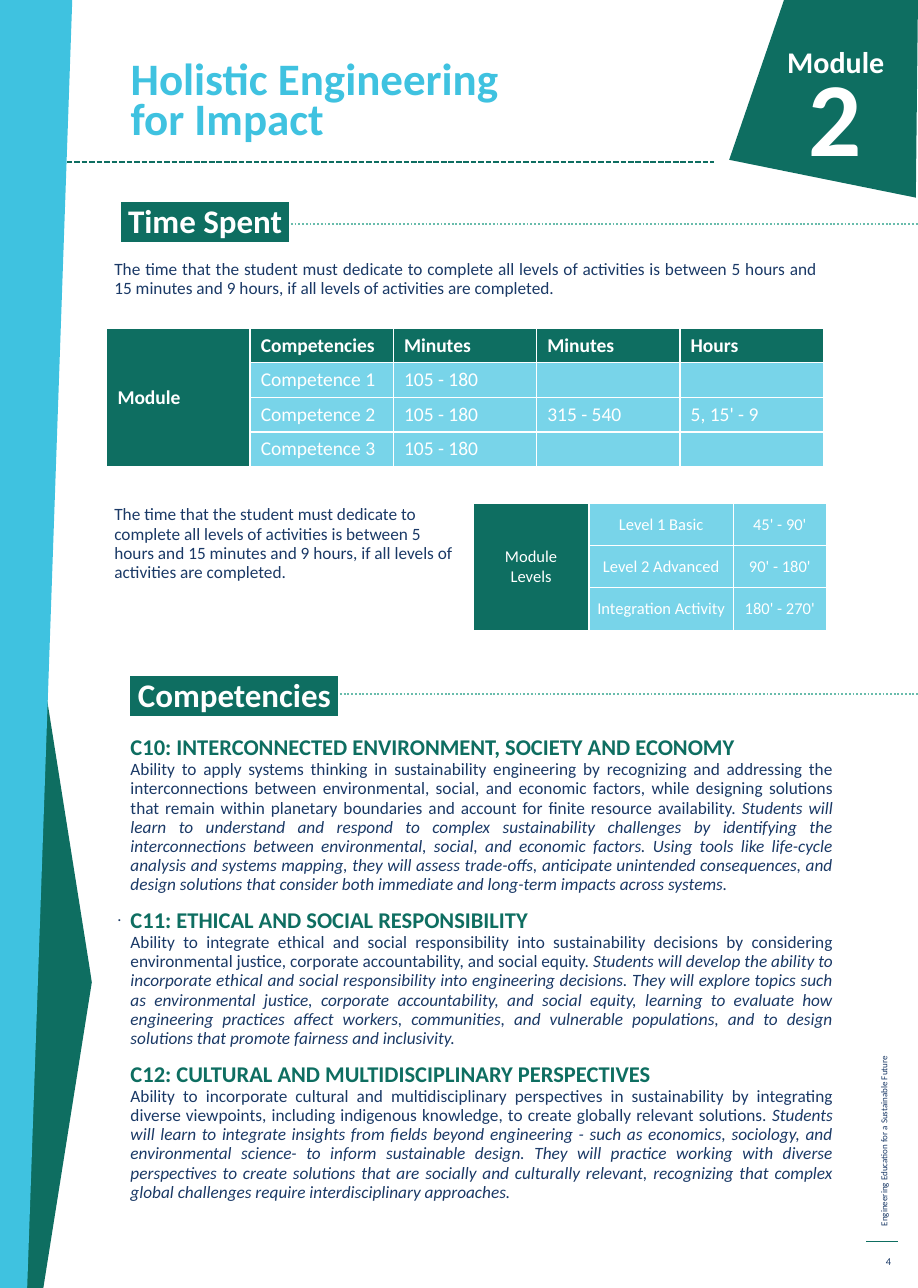
import lxml.etree
import pptx
import pptx.dml.color
import pptx.enum.dml
import pptx.enum.text
import pptx.oxml.ns
import pptx.util

Cm, Pt = pptx.util.Cm, pptx.util.Pt
qn = pptx.oxml.ns.qn
ALIGN = pptx.enum.text.PP_ALIGN
ANCHOR = pptx.enum.text.MSO_ANCHOR
DASH = pptx.enum.dml.MSO_LINE

COLOURS = {"green": "0E6E61", "blue": "3FC2E0", "navy": "1A3966",
           "mint": "69BCAC", "white": "FFFFFF"}
FONT = "Calibri"
WIDTH, HEIGHT = 21.59, 30.3
LEADING = 12.8


def rgb(name):
    return pptx.dml.color.RGBColor.from_string(COLOURS[name])


def add_colour(parent, name):
    fill = lxml.etree.SubElement(parent, qn("a:solidFill"))
    return lxml.etree.SubElement(fill, qn("a:srgbClr"), val=COLOURS[name])


class ModulePage:
    def __init__(self, deck):
        self.page = deck.slides.add_slide(deck.slide_layouts[5])
        self.shapes = self.page.shapes

    def span(self, para, text, size, colour, bold=False, italic=False, highlight=None):
        span = para.add_run()
        span.text = text
        font = span.font
        font.name, font.size, font.bold, font.italic = FONT, Pt(size), bold, italic
        font.color.rgb = rgb(colour)
        if highlight:
            mark = lxml.etree.Element(qn("a:highlight"))
            lxml.etree.SubElement(mark, qn("a:srgbClr"), val=COLOURS[highlight])
            font.fill  # the text fill precedes the highlight
            span._r.get_or_add_rPr().find(qn("a:solidFill")).addnext(mark)

    def para(self, frame, first, align=ALIGN.LEFT, leading=None, before=0):
        para = frame.paragraphs[0] if first else frame.add_paragraph()
        para.alignment = align
        para.space_before = Pt(before)
        if leading:
            para.line_spacing = leading
        return para

    def frame(self, box, anchor=ANCHOR.TOP):
        frame = box.text_frame
        frame.word_wrap = True
        frame.auto_size = pptx.enum.text.MSO_AUTO_SIZE.NONE
        frame.vertical_anchor = anchor
        return frame

    def box(self, place, anchor=ANCHOR.TOP, rotation=0):
        box = self.shapes.add_textbox(*map(Cm, place))
        box.rotation = rotation
        return self.frame(box, anchor)

    def label(self, place, text, size, colour, align=ALIGN.LEFT, leading=None,
              anchor=ANCHOR.TOP, rotation=0, **style):
        frame = self.box(place, anchor, rotation)
        self.span(self.para(frame, True, align, leading), text, size, colour, **style)

    def title(self, place, text):
        title = self.shapes.title
        title.left, title.top, title.width, title.height = map(Cm, place)
        frame = self.frame(title, ANCHOR.BOTTOM)
        self.span(self.para(frame, True, leading=Pt(26.8)), text, 30, "blue", bold=True)

    def outline(self, points, colour):
        corners = [(Cm(x), Cm(y)) for x, y in points]
        builder = self.shapes.build_freeform(*corners[0])
        builder.add_line_segments(corners[1:], close=True)
        shape = builder.convert_to_shape()
        shape.shadow.inherit = False
        shape.fill.solid()
        shape.fill.fore_color.rgb = rgb(colour)
        shape.line.fill.background()

    def rule(self, left, right, y, colour, width, dash=None):
        line = self.shapes.add_connector(1, Cm(left), Cm(y), Cm(right), Cm(y))
        line.line.color.rgb = rgb(colour)
        line.line.width = Pt(width)
        if dash:
            line.line.dash_style = dash
        lxml.etree.SubElement(line._element.spPr, qn("a:effectLst"))

    def section(self, left, top, text, rule_left, rule_y):
        self.rule(rule_left, WIDTH, rule_y, "mint", 1.25, DASH.ROUND_DOT)
        self.label((left, top, 16.87, 1.65), f" {text} ", 22, "white",
                   leading=0.9, bold=True, highlight="green")

    def cell(self, cell, text, size, dark, bold, align, margin):
        cell.vertical_anchor = ANCHOR.MIDDLE
        if margin is not None:
            cell.margin_left = cell.margin_right = Cm(margin)
            cell.margin_top = cell.margin_bottom = Cm(margin)
        for number, line in enumerate(text.split("\n")):
            para = self.para(cell.text_frame, number == 0, align)
            if line:
                self.span(para, line, size, "white", bold=bold)
            else:
                lxml.etree.SubElement(para._p, qn("a:endParaRPr"), sz=str(size * 100))
        # White borders, then a solid or see-through fill
        props = cell._tc.get_or_add_tcPr()
        for side in ("a:lnL", "a:lnR", "a:lnT", "a:lnB"):
            add_colour(lxml.etree.SubElement(props, qn(side), w=str(Pt(1))), "white")
        colour = add_colour(props, "green" if dark else "blue")
        if not dark:
            lxml.etree.SubElement(colour, qn("a:alpha"), val="70000")

    def table(self, left, top, widths, row_height, rows, size, header=False,
              align=ALIGN.LEFT, margin=None):
        table = self.shapes.add_table(
            len(rows), len(widths), Cm(left), Cm(top),
            Cm(sum(widths)), Cm(row_height * len(rows))).table
        table.first_row = table.horz_banding = False
        for column, width in zip(table.columns, widths):
            column.width = Cm(width)
        for r, row in enumerate(rows):
            table.rows[r].height = Cm(row_height)
            for c, text in enumerate(row):
                dark = c == 0 or (header and r == 0)
                self.cell(table.cell(r, c), text, size, dark, header and dark,
                          align, margin)
        table.cell(0, 0).merge(table.cell(len(rows) - 1, 0))

    def competences(self, place, items):
        frame = self.box(place)
        for number, (heading, ability, outcome) in enumerate(items):
            para = self.para(frame, number == 0, ALIGN.JUSTIFY, Pt(LEADING),
                             LEADING if number else 0)
            self.span(para, heading, 15, "green", bold=True)
            para = self.para(frame, False, ALIGN.JUSTIFY, Pt(LEADING))
            self.span(para, ability + " ", 11.5, "navy")
            self.span(para, outcome, 11.5, "navy", italic=True)


TIME_NOTE = ("The time that the student must dedicate to complete all levels of activities "
             "is between 5 hours and 15 minutes and 9 hours, if all levels of activities "
             "are completed.")
TIMES = [
    ["Module", "Competencies", "Minutes", "Minutes", "Hours"],
    ["", "Competence 1", "105 - 180", "", ""],
    ["", "Competence 2", "105 - 180", "315 - 540", "5, 15' - 9"],
    ["", "Competence 3", "105 - 180", "", ""],
]
LEVELS = [
    ["Module\nLevels", "Level 1 Basic", "45' - 90'"],
    ["", "Level 2 Advanced", "90' - 180'"],
    ["", "Integration Activity", "180' - 270'"],
]
COMPETENCES = [
    ("C10: INTERCONNECTED ENVIRONMENT, SOCIETY AND ECONOMY",
     "Ability to apply systems thinking in sustainability engineering by recognizing and addressing the interconnections between environmental, social, and economic factors, while designing solutions that remain within planetary boundaries and account for finite resource availability.",
     "Students will learn to understand and respond to complex sustainability challenges by identifying the interconnections between environmental, social, and economic factors. Using tools like life-cycle analysis and systems mapping, they will assess trade-offs, anticipate unintended consequences, and design solutions that consider both immediate and long-term impacts across systems."),
    ("C11: ETHICAL AND SOCIAL RESPONSIBILITY",
     "Ability to integrate ethical and social responsibility into sustainability decisions by considering environmental justice, corporate accountability, and social equity.",
     "Students will develop the ability to incorporate ethical and social responsibility into engineering decisions. They will explore topics such as environmental justice, corporate accountability, and social equity, learning to evaluate how engineering practices affect workers, communities, and vulnerable populations, and to design solutions that promote fairness and inclusivity."),
    ("C12: CULTURAL AND MULTIDISCIPLINARY PERSPECTIVES",
     "Ability to incorporate cultural and multidisciplinary perspectives in sustainability by integrating diverse viewpoints, including indigenous knowledge, to create globally relevant solutions.",
     "Students will learn to integrate insights from fields beyond engineering - such as economics, sociology, and environmental science- to inform sustainable design. They will practice working with diverse perspectives to create solutions that are socially and culturally relevant, recognizing that complex global challenges require interdisciplinary approaches."),
]


def main():
    deck = pptx.Presentation()
    deck.slide_width, deck.slide_height = Cm(WIDTH), Cm(HEIGHT)
    page = ModulePage(deck)

    # Side bands and footer
    page.outline([(1.02, HEIGHT), (0.58, HEIGHT), (0.58, 13.13), (2.11, 22.78),
                  (2.16, 23.11)], "green")
    page.outline([(0, 0), (1.7, 0), (0.64, HEIGHT), (0, HEIGHT)], "blue")
    page.label((15.09, 23.14, 11.4, 0.51), "Engineering Education for a Sustainable Future",
               6, "navy", rotation=270)
    page.rule(20.37, 21.13, 29.21, "green", 0.75)
    page.label((20.37, 29.31, 0.84, 0.74), "4", 7, "navy", ALIGN.RIGHT,
               anchor=ANCHOR.MIDDLE)

    # Title and module badge
    page.title((2.82, 0.74, 9.65, 2.79), "Holistic Engineering for Impact")
    page.rule(1.57, 16.79, 3.81, "green", 1.25, DASH.SQUARE_DOT)
    page.outline([(WIDTH, 0), (18.44, 0), (17.15, 3.76), (21.54, 4.65)], "green")
    page.label((16.48, 0.89, 4.57, 3.61), "Module", 20, "white", ALIGN.RIGHT, bold=True)
    page.label((15.95, 1.09, 4.57, 3.61), "2", 70, "white", ALIGN.RIGHT, bold=True)

    # Time spent
    page.section(2.59, 4.7, "Time Spent", 6.4, 5.26)
    page.label((2.44, 5.99, 17.02, 1.5), TIME_NOTE, 11.5, "navy", ALIGN.JUSTIFY, Pt(LEADING))
    page.table(2.51, 7.72, [3.37] * 5, 0.81, TIMES, 13, header=True)
    page.label((2.44, 11.76, 8.51, 3), TIME_NOTE, 11.5, "navy", leading=Pt(LEADING))
    page.table(11.13, 11.84, [2.72, 3.4, 2.18], 0.99, LEVELS, 11,
               align=ALIGN.CENTER, margin=0.03)

    # Competencies
    page.section(2.82, 15.85, "Competencies", 6.5, 16.33)
    page.label((2.51, 21.16, 0.8, 0.8), ".", 11, "navy")
    page.competences((2.82, 17.3, 17.02, 10.21), COMPETENCES)

    deck.save("out.pptx")


if __name__ == "__main__":
    main()
